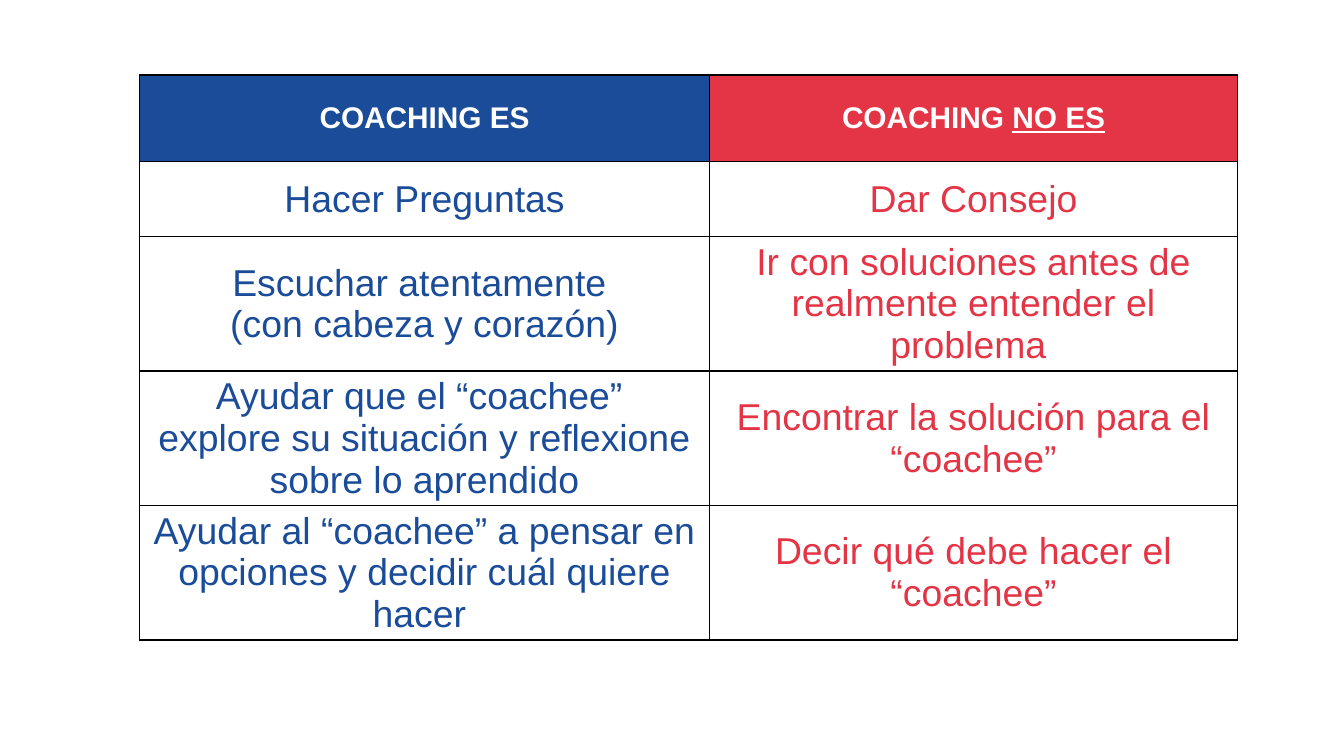
import pptx
import pptx.dml.color
import pptx.enum.text
import pptx.oxml
import pptx.oxml.ns
import pptx.util
from pptx.util import Cm

BLUE, RED, WHITE, BLACK = "1A4C99", "E33546", "FFFFFF", "000000"


def color(hex_value):
    return pptx.dml.color.RGBColor.from_string(hex_value)


def add_borders(cell):
    properties = cell._tc.get_or_add_tcPr()
    for position, side in enumerate(("lnL", "lnR", "lnT", "lnB")):
        border = pptx.oxml.parse_xml(
            f'<a:{side} {pptx.oxml.ns.nsdecls("a")} w="12700"><a:solidFill>'
            f'<a:srgbClr val="{BLACK}"/></a:solidFill></a:{side}>')
        properties.insert(position, border)


presentation = pptx.Presentation()
presentation.slide_width = Cm(25.4)
presentation.slide_height = Cm(14.28)
slide = presentation.slides.add_slide(presentation.slide_layouts[6])

# Each cell is a list of paragraphs, each paragraph a list of runs
rows = [
    ([["COACHING ES"]], [["COACHING ", "NO ES"]]),
    ([["Hacer Preguntas"]], [["Dar Consejo"]]),
    ([["Escuchar atentamente "], ["(con cabeza y corazón)"]],
     [["Ir con soluciones antes de realmente entender el problema "]]),
    ([["Ayudar que el “coachee” "],
      ["explore su situación y reflexione sobre lo aprendido"]],
     [["Encontrar la solución para el “coachee”"]]),
    ([["Ayudar al “coachee” a pensar en opciones y decidir cuál quiere hacer "]],
     [["Decir qué debe hacer el “coachee”"]]),
]
column_widths = [10.77, 9.98]
row_heights = [1.63, 1.42, 2.54, 2.54, 2.54]

# Comparison table
table = slide.shapes.add_table(
    len(rows), len(column_widths), Cm(2.64), Cm(1.42),
    Cm(sum(column_widths)), Cm(sum(row_heights))).table
table.first_row = False
table.horz_banding = False
for column, width in zip(table.columns, column_widths):
    column.width = Cm(width)
for row, height in zip(table.rows, row_heights):
    row.height = Cm(height)

# Cell contents: a filled header row over plain rows in the column colour
for row_index, row_content in enumerate(rows):
    is_header = row_index == 0
    for column_index, (paragraphs, accent) in enumerate(zip(row_content, (BLUE, RED))):
        cell = table.cell(row_index, column_index)
        cell.vertical_anchor = pptx.enum.text.MSO_ANCHOR.MIDDLE
        cell.margin_left = cell.margin_right = Cm(0.25 if is_header else 0.18)
        cell.margin_top = cell.margin_bottom = Cm(0.1 if is_header else 0)
        if is_header:
            cell.fill.solid()
            cell.fill.fore_color.rgb = color(accent)
        else:
            cell.fill.background()
        add_borders(cell)

        for paragraph_index, runs in enumerate(paragraphs):
            if paragraph_index == 0:
                paragraph = cell.text_frame.paragraphs[0]
            else:
                paragraph = cell.text_frame.add_paragraph()
            paragraph.alignment = pptx.enum.text.PP_ALIGN.CENTER
            for text in runs:
                run = paragraph.add_run()
                run.text = text
                run.font.name = "Arial"
                run.font.size = pptx.util.Pt(16 if is_header else 20)
                run.font.bold = is_header
                run.font.underline = text == "NO ES"
                run.font.color.rgb = color(WHITE if is_header else accent)

presentation.save("out.pptx")
